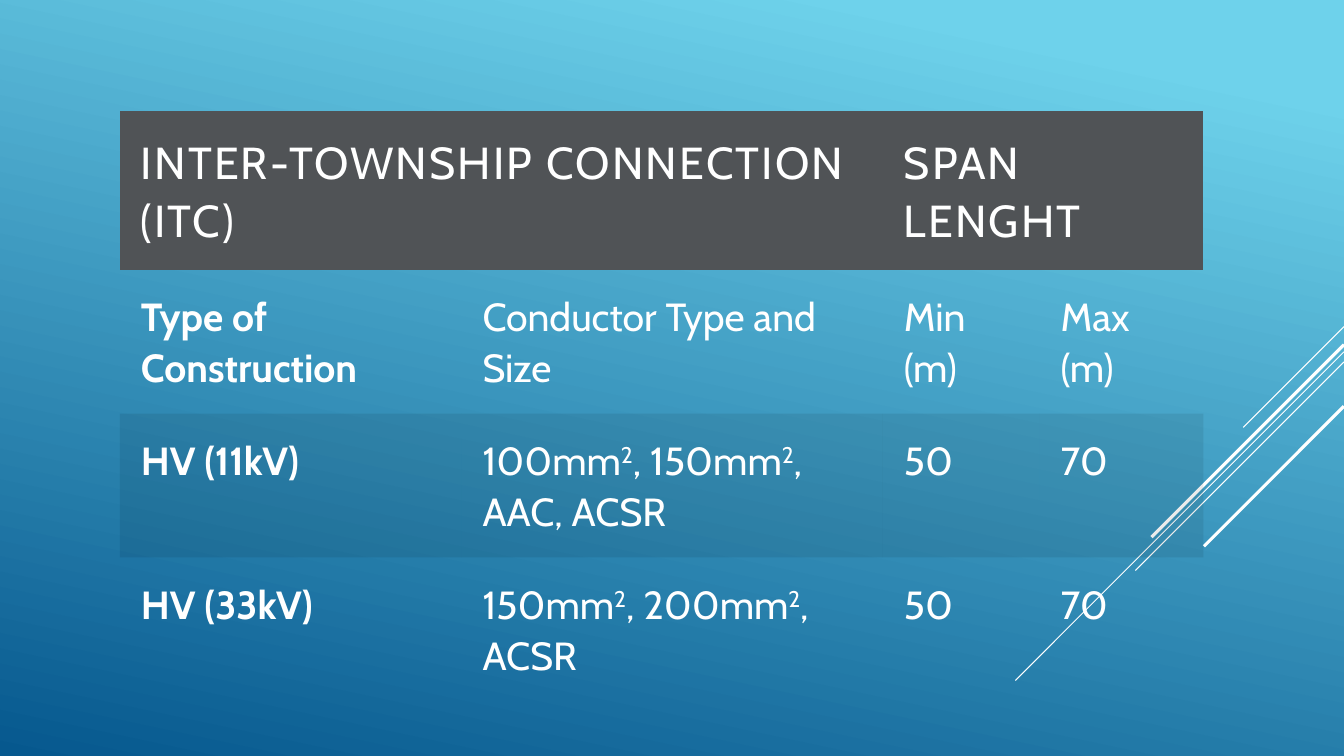
from lxml import etree
from pptx import Presentation
from pptx import util as u
from pptx.dml.color import RGBColor
from pptx.enum import shapes
from pptx.oxml.ns import qn

Pt = u.Pt
SKY = RGBColor(0x6E, 0xD2, 0xEB)
NAVY = RGBColor(0x06, 0x58, 0x8E)
GREY = RGBColor(0x50, 0x53, 0x56)
BLACK = RGBColor(0, 0, 0)
WHITE = RGBColor(0xFF, 0xFF, 0xFF)
FONT = "Cabin"
PLAIN_TABLE = "{2D5ABB26-0587-4C30-8999-92F81FD0307C}"
SLIDE_W, SLIDE_H = 960, 540

COLUMNS = [244, 301, 112, 117]
ROW_HEIGHTS = [95, 88, 88, 88]
# Each cell is a list of runs; "²" is set as a raised 2
HEADER = {0: "INTER-TOWNSHIP CONNECTION (ITC)", 2: "SPAN LENGHT"}
BODY = [
    [["Type of Construction"], ["Conductor Type and Size"], ["Min (m)"], ["Max (m)"]],
    [["HV (11kV)"], ["100mm", "²", ", 150mm", "²", ", AAC, ACSR"], ["50"], ["70"]],
    [["HV (33kV)"], ["150mm", "²", ", 200mm", "²", ", ACSR"], ["50"], ["70"]],
]
# Start height at the right edge, horizontal run, line width
STREAKS = [(233.3, 72, 0.75), (251.3, 234.7, 0.75), (258.5, 149, 0.75),
           (246.2, 137.5, 2.25), (290.2, 100, 2.25)]


def add_backdrop(slide, x, y, w, h):
    sp = slide.shapes.add_shape(shapes.MSO_SHAPE.RECTANGLE, Pt(x), Pt(y), Pt(w), Pt(h))
    sp.shadow.inherit = False
    sp.line.fill.background()
    sp.fill.gradient()
    sp.fill.gradient_angle = 258
    for stop, position, color in zip(sp.fill.gradient_stops, (0.1, 1), (SKY, NAVY)):
        stop.position = position
        stop.color.rgb = color


def add_streaks(slide, right, top):
    """Diagonal lines running down and left at 45 degrees."""
    group = slide.shapes.add_group_shape()
    for y, run, width in STREAKS:
        line = group.shapes.add_connector(
            shapes.MSO_CONNECTOR.STRAIGHT,
            Pt(right), Pt(top + y), Pt(right - run), Pt(top + y + run))
        line.line.color.rgb = WHITE
        line.line.width = Pt(width)
        etree.SubElement(line._element.spPr, qn("a:effectLst"))


def fill_cell(cell, runs, size, bold=False, spacing=0, color=None, alpha=None):
    cell.margin_left = cell.margin_right = Pt(15)
    cell.margin_top = cell.margin_bottom = Pt(15)
    if color is None:
        cell.fill.background()
    else:
        cell.fill.solid()
        cell.fill.fore_color.rgb = color
    if alpha is not None:
        clr = cell._tc.tcPr.find(".//" + qn("a:srgbClr"))
        etree.SubElement(clr, qn("a:alpha")).set("val", str(alpha * 1000))
    p = cell.text_frame.paragraphs[0]
    p.line_spacing = 1.07
    for words in runs:
        r = p.add_run()
        r.text = "2" if words == "²" else words
        r.font.name = FONT
        r.font.size = Pt(size)
        r.font.bold = bold
        r.font.color.rgb = WHITE
        rPr = r.font._element
        rPr.set("spc", str(int(spacing * 100)))
        if words == "²":
            rPr.set("baseline", "30000")


def add_span_table(slide, x, y):
    frame = slide.shapes.add_table(
        len(ROW_HEIGHTS), len(COLUMNS), Pt(x), Pt(y),
        Pt(sum(COLUMNS)), Pt(sum(ROW_HEIGHTS)))
    table = frame.table
    table.first_row = table.horz_banding = False
    table._tbl.tblPr.find(qn("a:tableStyleId")).text = PLAIN_TABLE
    for column, width in zip(table.columns, COLUMNS):
        column.width = Pt(width)
    for row, height in zip(table.rows, ROW_HEIGHTS):
        row.height = Pt(height)

    # Header: two titles, each across two columns
    for c, title in HEADER.items():
        table.cell(0, c).merge(table.cell(0, c + 1))
        fill_cell(table.cell(0, c), [title], 32, spacing=1.5, color=GREY)

    # Body: bold first column, every second row shaded
    for i, row in enumerate(BODY):
        shade = {"color": BLACK, "alpha": 8} if i % 2 else {}
        for c, runs in enumerate(row):
            fill_cell(table.cell(i + 1, c), runs, 28, bold=c == 0, **shade)


def main():
    prs = Presentation()
    prs.slide_width, prs.slide_height = Pt(SLIDE_W), Pt(SLIDE_H)
    slide = prs.slides.add_slide(prs.slide_layouts[6])
    add_backdrop(slide, 0, 0, SLIDE_W, SLIDE_H)
    add_streaks(slide, SLIDE_W, 0)
    add_span_table(slide, 85.7, 79.2)
    prs.save("out.pptx")


if __name__ == "__main__":
    main()
